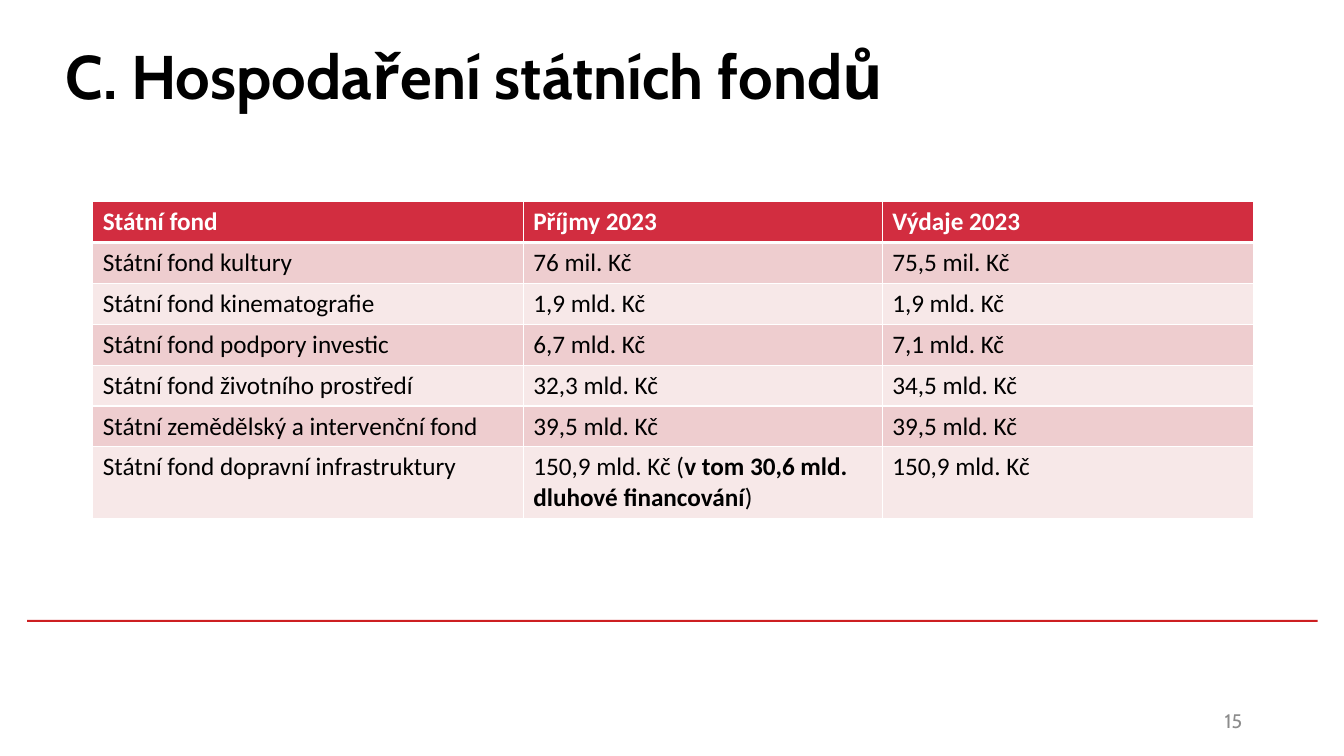
from lxml import etree
from pptx import Presentation
from pptx.dml.color import RGBColor
from pptx.enum import shapes, text
from pptx.oxml import ns
from pptx.util import Inches, Pt

TITLE = "C. Hospodaření státních fondů"
PAGE_NUMBER = "15"
HEADER = ["Státní fond", "Příjmy 2023", "Výdaje 2023"]
# A cell is a string, or a tuple of runs in which every second run is bold
FUNDS = [
    ["Státní fond kultury", "76 mil. Kč", "75,5 mil. Kč"],
    ["Státní fond kinematografie", "1,9 mld. Kč", "1,9 mld. Kč"],
    ["Státní fond podpory investic", "6,7 mld. Kč", "7,1 mld. Kč"],
    ["Státní fond životního prostředí", "32,3 mld. Kč", "34,5 mld. Kč"],
    ["Státní zemědělský a intervenční fond", "39,5 mld. Kč", "39,5 mld. Kč"],
    ["Státní fond dopravní infrastruktury",
     ("150,9 mld. Kč (", "v tom 30,6 mld. dluhové financování", ")"),
     "150,9 mld. Kč"],
]
COLUMN_WIDTHS = [4.27, 3.56, 3.68]
ROW_HEIGHT, LAST_ROW_HEIGHT = 0.405, 0.7

BLACK = RGBColor(0x00, 0x00, 0x00)
WHITE = RGBColor(0xFF, 0xFF, 0xFF)
GREY = RGBColor(0x8C, 0x8C, 0x8C)
RULE_RED = RGBColor(0xCD, 0x1F, 0x21)
HEADER_RED = RGBColor(0xD2, 0x2D, 0x40)
BANDS = [RGBColor(0xEE, 0xCD, 0xCF), RGBColor(0xF7, 0xE8, 0xE8)]


def set_font(paragraph, name, size, color, bold=False):
    font = paragraph.font
    font.name, font.size, font.bold = name, Pt(size), bold
    font.color.rgb = color


def add_borders(cell, widths):
    properties = cell._tc.get_or_add_tcPr()
    for side, width in widths.items():
        line = etree.SubElement(properties, ns.qn("a:ln" + side), w=str(Pt(width)))
        fill = etree.SubElement(line, ns.qn("a:solidFill"))
        etree.SubElement(fill, ns.qn("a:srgbClr"), val=str(WHITE))


presentation = Presentation()
presentation.slide_width, presentation.slide_height = Inches(13.33), Inches(7.5)
slide = presentation.slides.add_slide(presentation.slide_layouts[5])

# Red rule near the foot
rule = slide.shapes.add_shape(shapes.MSO_SHAPE.RECTANGLE, Inches(0.27), Inches(6.15),
                              Inches(12.8), Inches(0.02))
rule.shadow.inherit = False
rule.fill.solid()
rule.fill.fore_color.rgb = RULE_RED
rule.line.fill.background()

# Title
title = slide.shapes.title
title.left, title.top = Inches(0.55), Inches(0.02)
title.width, title.height = Inches(12.26), Inches(1.45)
title.text_frame.text = TITLE
title.text_frame.vertical_anchor = text.MSO_ANCHOR.MIDDLE
title_paragraph = title.text_frame.paragraphs[0]
title_paragraph.alignment = text.PP_ALIGN.LEFT
set_font(title_paragraph, "Cabin", 44, BLACK, bold=True)

# Table of funds
rows = [HEADER] + FUNDS
heights = [ROW_HEIGHT] * len(FUNDS) + [LAST_ROW_HEIGHT]
table = slide.shapes.add_table(len(rows), len(HEADER), Inches(0.92), Inches(2),
                               Inches(sum(COLUMN_WIDTHS)), Inches(sum(heights))).table
for column, width in zip(table.columns, COLUMN_WIDTHS):
    column.width = Inches(width)
for r, (values, height) in enumerate(zip(rows, heights)):
    table.rows[r].height = Inches(height)
    for c, value in enumerate(values):
        cell = table.cell(r, c)
        add_borders(cell, {"L": 1, "R": 1, "T": 3 if r == 1 else 1, "B": 3 if r == 0 else 1})
        cell.fill.solid()
        cell.fill.fore_color.rgb = HEADER_RED if r == 0 else BANDS[(r - 1) % 2]
        paragraph = cell.text_frame.paragraphs[0]
        runs = (value,) if isinstance(value, str) else value
        for i, words in enumerate(runs):
            run = paragraph.add_run()
            run.text = words
            run.font.bold = r == 0 or i % 2 == 1
        set_font(paragraph, "Calibri", 18, WHITE if r == 0 else BLACK, bold=r == 0)

# Page number
number = slide.shapes.add_textbox(Inches(9.42), Inches(6.95), Inches(3), Inches(0.4))
number.text_frame.word_wrap = True
number.text_frame.vertical_anchor = text.MSO_ANCHOR.MIDDLE
number.text_frame.text = PAGE_NUMBER
number_paragraph = number.text_frame.paragraphs[0]
number_paragraph.alignment = text.PP_ALIGN.RIGHT
set_font(number_paragraph, "Cabin", 14, GREY)

presentation.save("out.pptx")
